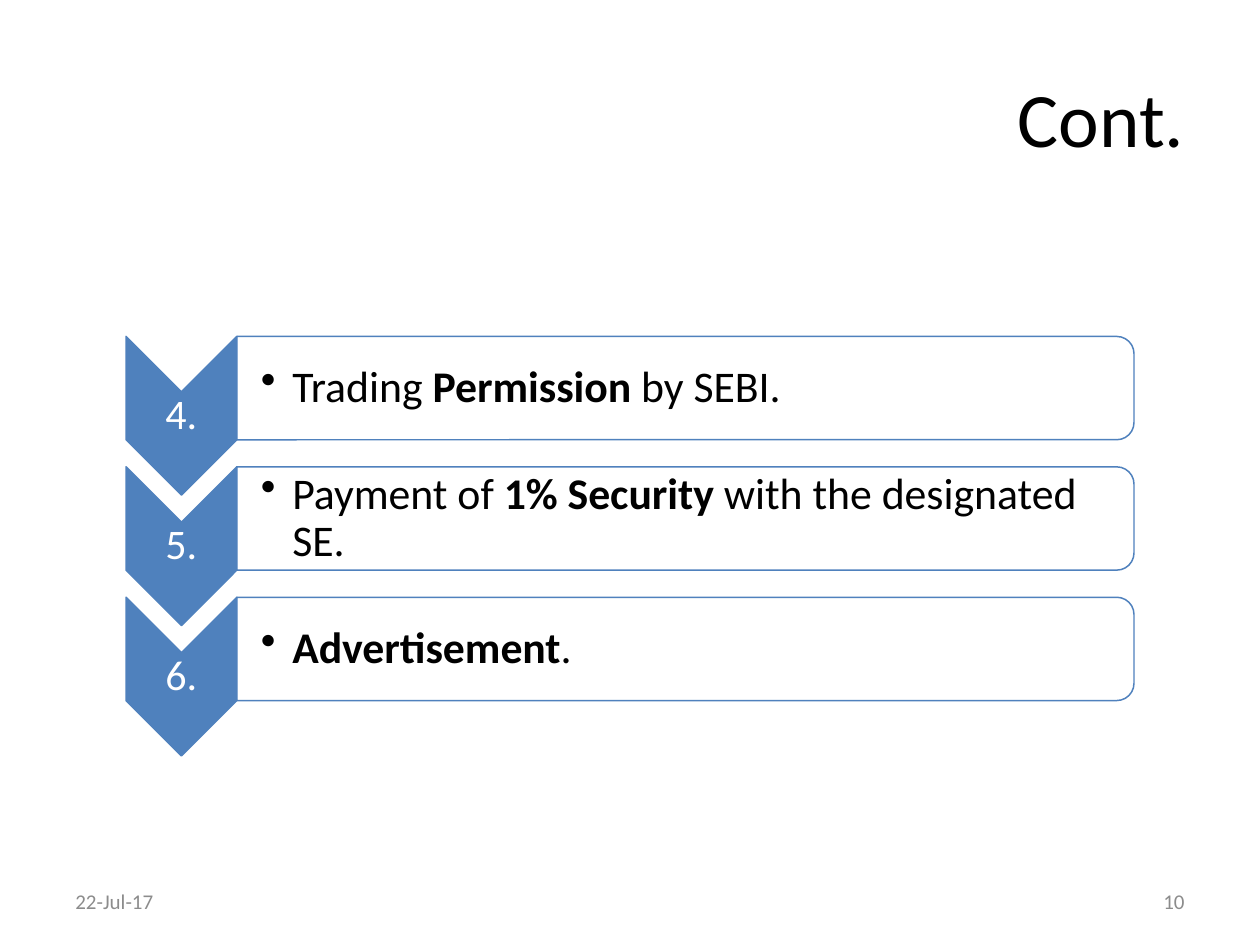
import dataclasses

import lxml.etree
import pptx
import pptx.dml.color
import pptx.enum.shapes
import pptx.enum.text
import pptx.oxml.ns
import pptx.util

Inches = pptx.util.Inches
Pt = pptx.util.Pt
Shape = pptx.enum.shapes.MSO_SHAPE
Align = pptx.enum.text.PP_ALIGN
qn = pptx.oxml.ns.qn


@dataclasses.dataclass(frozen=True)
class Theme:
    font: str = "Calibri"
    black: str = "000000"
    white: str = "FFFFFF"
    blue: str = "4F81BD"
    gray: str = "8C8C8C"
    title_size: int = 44
    step_size: int = 25
    number_size: int = 24
    footer_size: int = 12
    outline: float = 0.85


class StepSlide:
    def __init__(self, page, theme):
        self.page = page
        self.theme = theme
        self.diagram = page.shapes.add_group_shape().shapes

    def add_span(self, para, text, size, color, bold=False):
        span = para.add_run()
        span.text = text
        span.font.name = self.theme.font
        span.font.size = Pt(size)
        span.font.bold = bold
        span.font.color.rgb = pptx.dml.color.RGBColor.from_string(color)

    def title(self, text):
        box = self.page.shapes.title
        box.left, box.top = Inches(0.5), Inches(0.3)
        box.width, box.height = Inches(9), Inches(1.25)
        box.text_frame.vertical_anchor = pptx.enum.text.MSO_ANCHOR.MIDDLE
        para = box.text_frame.paragraphs[0]
        para.alignment = Align.RIGHT
        self.add_span(para, text, self.theme.title_size, self.theme.black)

    def text_box(self, shapes, left, top, width, height, align, insets=None):
        """Add a middle-anchored box and return its first paragraph."""
        frame = shapes.add_textbox(
            Inches(left), Inches(top), Inches(width), Inches(height)).text_frame
        frame.word_wrap = True
        frame.vertical_anchor = pptx.enum.text.MSO_ANCHOR.MIDDLE
        if insets:
            frame.margin_left, frame.margin_top, frame.margin_right, frame.margin_bottom = (
                Inches(inset) for inset in insets)
        para = frame.paragraphs[0]
        para.alignment = align
        return para

    def turned_shape(self, kind, left, top, width, height, fill):
        """Add a shape turned by 90 degrees; the place is given before turning."""
        shape = self.diagram.add_shape(
            kind, Inches(left), Inches(top), Inches(width), Inches(height))
        shape.rotation = 90
        shape.shadow.inherit = False
        shape.fill.solid()
        shape.fill.fore_color.rgb = pptx.dml.color.RGBColor.from_string(fill)
        shape.line.color.rgb = pptx.dml.color.RGBColor.from_string(self.theme.blue)
        shape.line.width = Pt(self.theme.outline)
        return shape

    def number(self, text, top):
        theme = self.theme
        self.turned_shape(Shape.CHEVRON, 0.81, top + 0.19, 1.26, 0.88, theme.blue)
        para = self.text_box(self.diagram, 1, top + 0.44, 0.88, 0.38,
                             Align.CENTER, (0.02,) * 4)
        para.line_spacing = 0.9
        self.add_span(para, text, theme.number_size, theme.white)

    def panel(self, spans, top):
        theme = self.theme
        panel = self.turned_shape(Shape.ROUND_2_SAME_RECTANGLE,
                                  5.03, top - 3.15, 0.82, 7.12, theme.white)
        # Slightly transparent fill
        color = panel.fill.fore_color._xFill[0]
        lxml.etree.SubElement(color, qn("a:alpha"), val="90000")
        para = self.text_box(self.diagram, 1.88, top + 0.04, 7.08, 0.74,
                             Align.LEFT, (0.19, 0.02, 0.02, 0.02))
        para.level = 1
        para.line_spacing = 0.9
        self.bullet(para)
        for text, bold in spans:
            self.add_span(para, text, theme.step_size, theme.black, bold)

    def bullet(self, para):
        properties = para._p.get_or_add_pPr()
        properties.set("marL", str(Inches(0.25)))
        properties.set("indent", str(-Inches(0.25)))
        lxml.etree.SubElement(properties, qn("a:buChar"), char="•")

    def footer(self, text, left, align):
        para = self.text_box(self.page.shapes, left, 6.95, 2.33, 0.4, align)
        self.add_span(para, text, self.theme.footer_size, self.theme.gray)


def main():
    deck = pptx.Presentation()
    deck.slide_width, deck.slide_height = Inches(10), Inches(7.5)
    title_only = deck.slide_layouts[5]
    slide = StepSlide(deck.slides.add_slide(title_only), Theme())

    slide.title("Cont.")

    # Numbered steps: each is a list of (text, bold) spans
    steps = [
        [("Trading ", False), ("Permission", True), (" by SEBI.", False)],
        [("Payment of ", False), ("1% Security ", True),
         ("with the designated SE.", False)],
        [("Advertisement", True), (".", False)],
    ]
    first_top, last_top = 2.67, 4.74
    pitch = (last_top - first_top) / (len(steps) - 1)
    for index, spans in enumerate(steps):
        top = first_top + index * pitch
        slide.number(f"{index + 4}.", top)
        slide.panel(spans, top)

    # Date and page number
    slide.footer("22-Jul-17", 0.5, Align.LEFT)
    slide.footer("10", 7.17, Align.RIGHT)

    deck.save("out.pptx")


if __name__ == "__main__":
    main()
